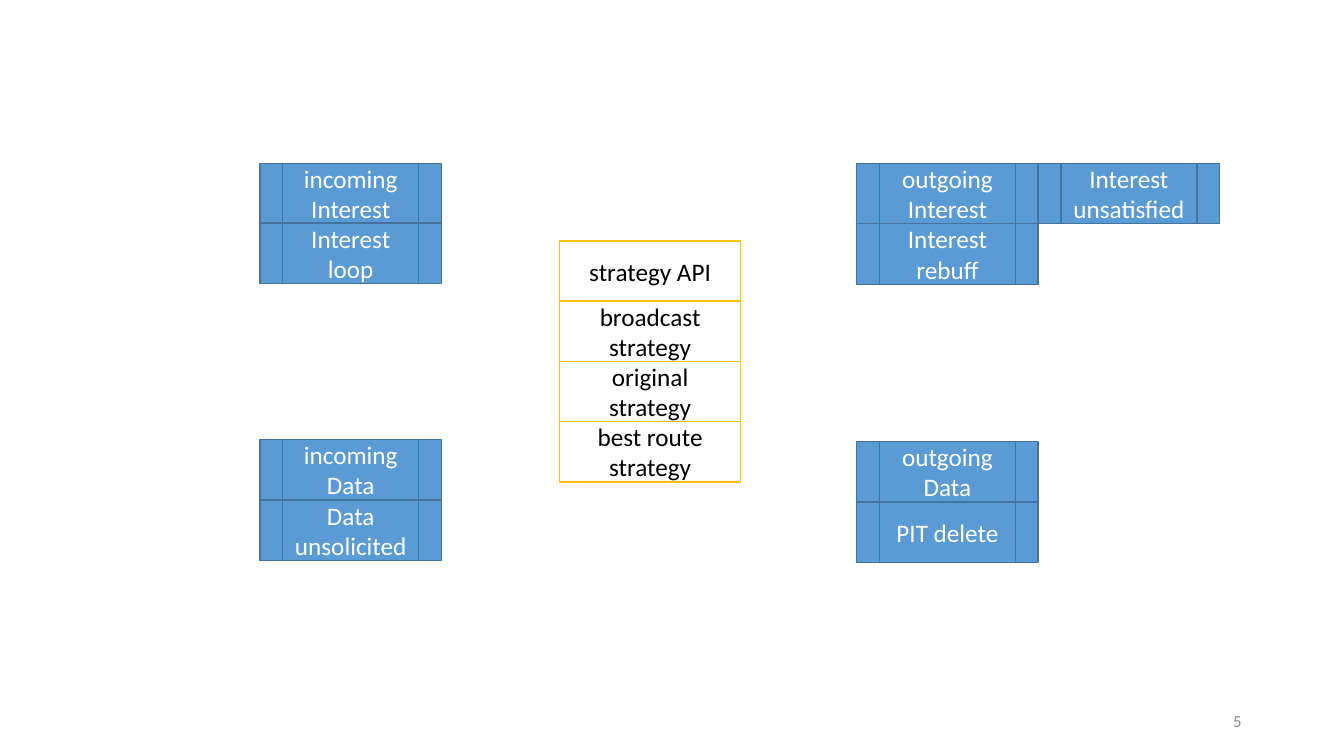
from dataclasses import dataclass

from pptx import Presentation
from pptx.dml.color import RGBColor
from pptx.enum.shapes import MSO_SHAPE
from pptx.enum.text import MSO_ANCHOR, PP_ALIGN
from pptx.shapes.base import BaseShape
from pptx.slide import Slide
from pptx.util import Pt

PROCESS = MSO_SHAPE.FLOWCHART_PREDEFINED_PROCESS
RECTANGLE = MSO_SHAPE.RECTANGLE
MIDDLE = MSO_ANCHOR.MIDDLE
CENTER = PP_ALIGN.CENTER
RIGHT = PP_ALIGN.RIGHT


@dataclass(frozen=True)
class Theme:
    font: str = "Calibri"
    label_size: float = 18
    page_number_size: float = 12
    page_number: str = "8C8C8C"
    line_width: float = 1


@dataclass(frozen=True)
class BoxStyle:
    outline: MSO_SHAPE
    fill: str
    line: str
    text: str


@dataclass(frozen=True)
class Stack:
    """Boxes of one style placed directly below each other."""
    left: float
    top: float
    style: BoxStyle
    labels: tuple[str, ...]
    pitch: float = 43.2


THEME = Theme()
PIPELINE = BoxStyle(PROCESS, fill="5B9BD5", line="43739E", text="FFFFFF")
STRATEGY = BoxStyle(RECTANGLE, fill="FFFFFF", line="FFC000", text="000000")

SLIDE_WIDTH, SLIDE_HEIGHT = 960, 540
BOX_WIDTH, BOX_HEIGHT = 129.6, 43.2
INCOMING_LEFT, STRATEGY_LEFT, OUTGOING_LEFT = 185.76, 399.6, 612
INTEREST_TOP = 116.64

STACKS = (
    Stack(INCOMING_LEFT, INTEREST_TOP, PIPELINE, ("incoming Interest", "Interest loop"), pitch=42.8),
    Stack(INCOMING_LEFT, 313.92, PIPELINE, ("incoming Data", "Data unsolicited")),
    Stack(OUTGOING_LEFT, INTEREST_TOP, PIPELINE, ("outgoing Interest", "Interest rebuff")),
    Stack(OUTGOING_LEFT + BOX_WIDTH, INTEREST_TOP, PIPELINE, ("Interest unsatisfied",)),
    Stack(OUTGOING_LEFT, 315.36, PIPELINE, ("outgoing Data", "PIT delete")),
    Stack(STRATEGY_LEFT, 172.08, STRATEGY,
          ("strategy API", "broadcast strategy", "original strategy", "best route strategy"), pitch=43),
)


def write_text(shape: BaseShape, text: str, *, size: float, color: str,
               align: PP_ALIGN = CENTER) -> None:
    frame = shape.text_frame
    frame.word_wrap = True
    frame.vertical_anchor = MIDDLE
    paragraph = frame.paragraphs[0]
    paragraph.alignment = align
    run = paragraph.add_run()
    run.text = text
    run.font.name = THEME.font
    run.font.size = Pt(size)
    run.font.color.rgb = RGBColor.from_string(color)


def draw_box(slide: Slide, left: float, top: float, style: BoxStyle, label: str) -> None:
    box = slide.shapes.add_shape(style.outline, Pt(left), Pt(top), Pt(BOX_WIDTH), Pt(BOX_HEIGHT))
    box.shadow.inherit = False
    box.fill.solid()
    box.fill.fore_color.rgb = RGBColor.from_string(style.fill)
    box.line.color.rgb = RGBColor.from_string(style.line)
    box.line.width = Pt(THEME.line_width)
    write_text(box, label, size=THEME.label_size, color=style.text)


def draw_stack(slide: Slide, stack: Stack) -> None:
    for row, label in enumerate(stack.labels):
        draw_box(slide, stack.left, stack.top + row * stack.pitch, stack.style, label)


def draw_page_number(slide: Slide, number: str) -> None:
    page_number = slide.shapes.add_textbox(Pt(678), Pt(500.5), Pt(216), Pt(28.75))
    write_text(page_number, number, size=THEME.page_number_size,
               color=THEME.page_number, align=RIGHT)


def main() -> None:
    presentation = Presentation()
    presentation.slide_width = Pt(SLIDE_WIDTH)
    presentation.slide_height = Pt(SLIDE_HEIGHT)
    slide = presentation.slides.add_slide(presentation.slide_layouts[6])
    draw_page_number(slide, "5")
    for stack in STACKS:
        draw_stack(slide, stack)
    presentation.save("out.pptx")


if __name__ == "__main__":
    main()
